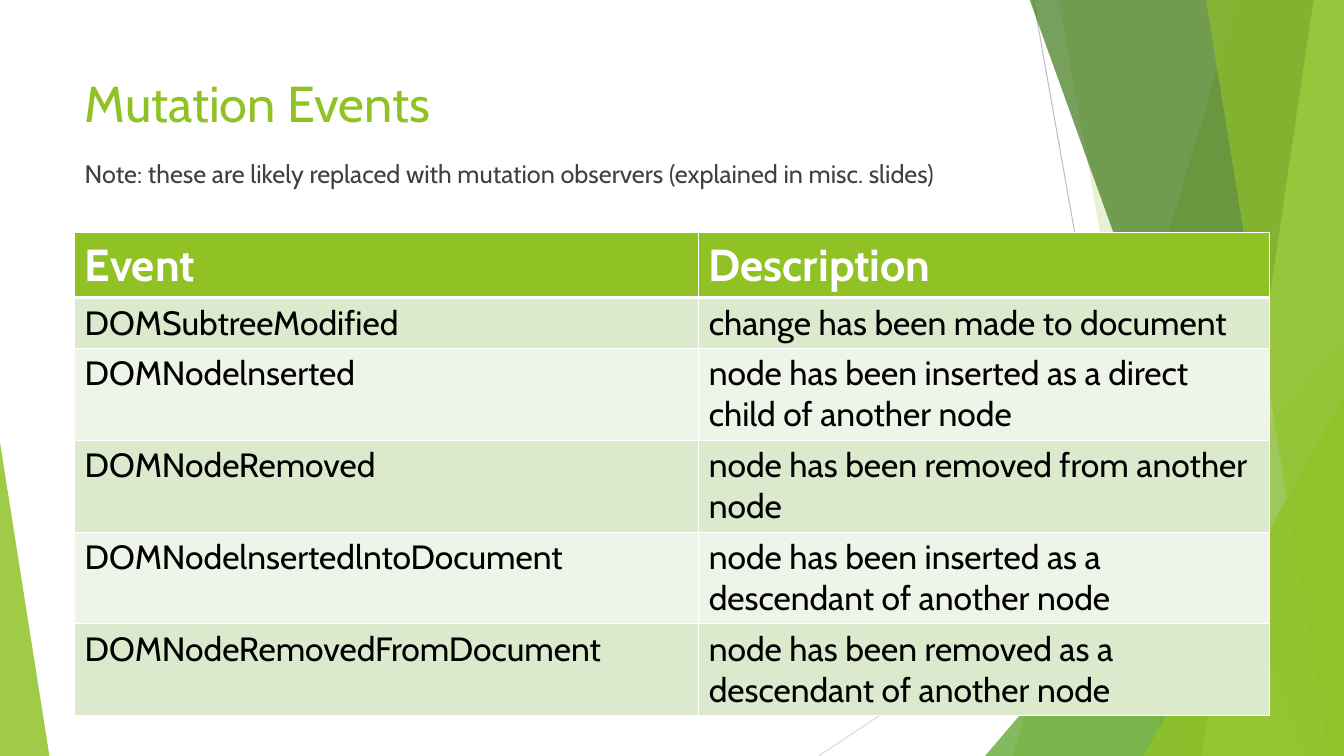
import pptx
import pptx.util
import pptx.dml.color
import pptx.enum.shapes
import pptx.enum.text
import pptx.oxml
import pptx.oxml.ns
import lxml.etree

PX = pptx.util.Inches(0.01)
W, H = 1333, 750
THEME = dict(
    font="Cabin", title=36, note=18, head=32, cell=24,
    green="90C226", leaf="54A021", forest="3F7819", lime="C0E474",
    white="FFFFFF", black="000000", dark="404040",
    gray="BFBFBF", pale_gray="D9D9D9", band="DBE9CD", pale_band="EEF4E8",
)
qn = pptx.oxml.ns.qn


def rgb(name):
    return pptx.dml.color.RGBColor.from_string(THEME[name])


def write(tf, text, size, color, bold=False, before=0):
    p = tf.paragraphs[0]
    p.alignment = pptx.enum.text.PP_ALIGN.LEFT
    p.space_before = pptx.util.Pt(before)
    r = p.add_run()
    r.text = text
    r.font.name = THEME["font"]
    r.font.size = pptx.util.Pt(THEME[size])
    r.font.bold = bold
    r.font.color.rgb = rgb(color)


prs = pptx.Presentation()
prs.slide_width, prs.slide_height = W * PX, H * PX
slide = prs.slides.add_slide(prs.slide_layouts[1])
shapes = slide.shapes
title, body = slide.placeholders

for x1, y1, x2, y2, color in [
    (1025, 0, 1158, H, "gray"),
    (W, 403, 812, H, "pale_gray"),
]:
    line = shapes.add_connector(
        pptx.enum.shapes.MSO_CONNECTOR.STRAIGHT, x1 * PX, y1 * PX, x2 * PX, y2 * PX)
    line.line.color.rgb = rgb(color)
    line.line.width = pptx.util.Pt(0.75)
    lxml.etree.SubElement(line.element.spPr, qn("a:effectLst"))

facets = [
    ("band", (1228, 1004), "green", 30),
    ("band", (1050, 1183), "green", 20),
    ("triangle", (977, 333, 356, 417, 1), "leaf", 72),
    ("band", (1021, 1291), "forest", 70),
    ("band", (1303, 1192), "lime", 70),
    ("band", (1196, 1318), "green", 65),
    ("triangle", (1134, 393, 199, 357, 1), "green", 80),
    ("triangle", (0, 439, 49, 311, 0), "green", 85),
]
for kind, geometry, color, opacity in facets:
    if kind == "band":
        top_x, bottom_x = geometry
        outline = shapes.build_freeform(top_x, -1, scale=PX)
        outline.add_line_segments([(W, -1), (W, H), (bottom_x, H)], close=True)
        sp = outline.convert_to_shape()
    else:
        x, y, w, h, apex = geometry
        sp = shapes.add_shape(
            pptx.enum.shapes.MSO_SHAPE.ISOSCELES_TRIANGLE, x * PX, y * PX, w * PX, h * PX)
        sp.adjustments[0] = apex
    sp.shadow.inherit = False
    sp.fill.solid()
    sp.fill.fore_color.rgb = rgb(color)
    sp.line.fill.background()
    clr = sp.element.spPr.find(qn("a:solidFill")).find(qn("a:srgbClr"))
    lxml.etree.SubElement(clr, qn("a:alpha"), val=str(opacity * 1000))

for ph, box, text, style in [
    (title, (74, 67, 940, 85), "Mutation Events", dict(size="title", color="green")),
    (body, (74, 152, 1039, 509),
     "Note: these are likely replaced with mutation observers (explained in misc. slides)",
     dict(size="note", color="dark", before=10)),
]:
    ph.left, ph.top, ph.width, ph.height = [v * PX for v in box]
    tf = ph.text_frame
    tf.word_wrap = True
    tf.auto_size = pptx.enum.text.MSO_AUTO_SIZE.NONE
    tf.vertical_anchor = pptx.enum.text.MSO_ANCHOR.TOP
    write(tf, text, **style)
    ph.element.getparent().append(ph.element)

pPr = body.text_frame.paragraphs[0].element.get_or_add_pPr() if hasattr(
    body.text_frame.paragraphs[0], "element") else body.text_frame.paragraphs[0]._p.get_or_add_pPr()
pPr.set("marL", "0")
pPr.set("indent", "0")
lxml.etree.SubElement(pPr, qn("a:buNone"))

rows = [
    ("Event", "Description"),
    ("DOMSubtreeModified", "change has been made to document"),
    ("DOMNodelnserted", "node has been inserted as a direct child of another node"),
    ("DOMNodeRemoved", "node has been removed from another node"),
    ("DOMNodelnsertedlntoDocument", "node has been inserted as a descendant of another node"),
    ("DOMNodeRemovedFromDocument", "node has been removed as a descendant of another node"),
]
col_widths = [619, 566]
row_heights = [64, 50] + [91] * 4
table = shapes.add_table(
    len(rows), len(col_widths), 74 * PX, 231 * PX,
    sum(col_widths) * PX, sum(row_heights) * PX).table
table.first_row = table.horz_banding = False
for col, width in zip(table.columns, col_widths):
    col.width = width * PX
for i, (texts, height) in enumerate(zip(rows, row_heights)):
    table.rows[i].height = height * PX
    if i == 0:
        fill, style = "green", dict(size="head", color="white", bold=True)
    else:
        fill, style = ("band" if i % 2 else "pale_band"), dict(size="cell", color="black")
    for j, text in enumerate(texts):
        cell = table.cell(i, j)
        write(cell.text_frame, text, **style)
        cell.fill.solid()
        cell.fill.fore_color.rgb = rgb(fill)
        tcPr = cell._tc.get_or_add_tcPr()
        for k, side in enumerate("LRTB"):
            thick = (i, side) in [(0, "B"), (1, "T")]
            ln = lxml.etree.Element(qn("a:ln" + side), w=str(pptx.util.Pt(3 if thick else 1)))
            solid = lxml.etree.SubElement(ln, qn("a:solidFill"))
            lxml.etree.SubElement(solid, qn("a:srgbClr"), val=THEME["white"])
            tcPr.insert(k, ln)

prs.save("out.pptx")
